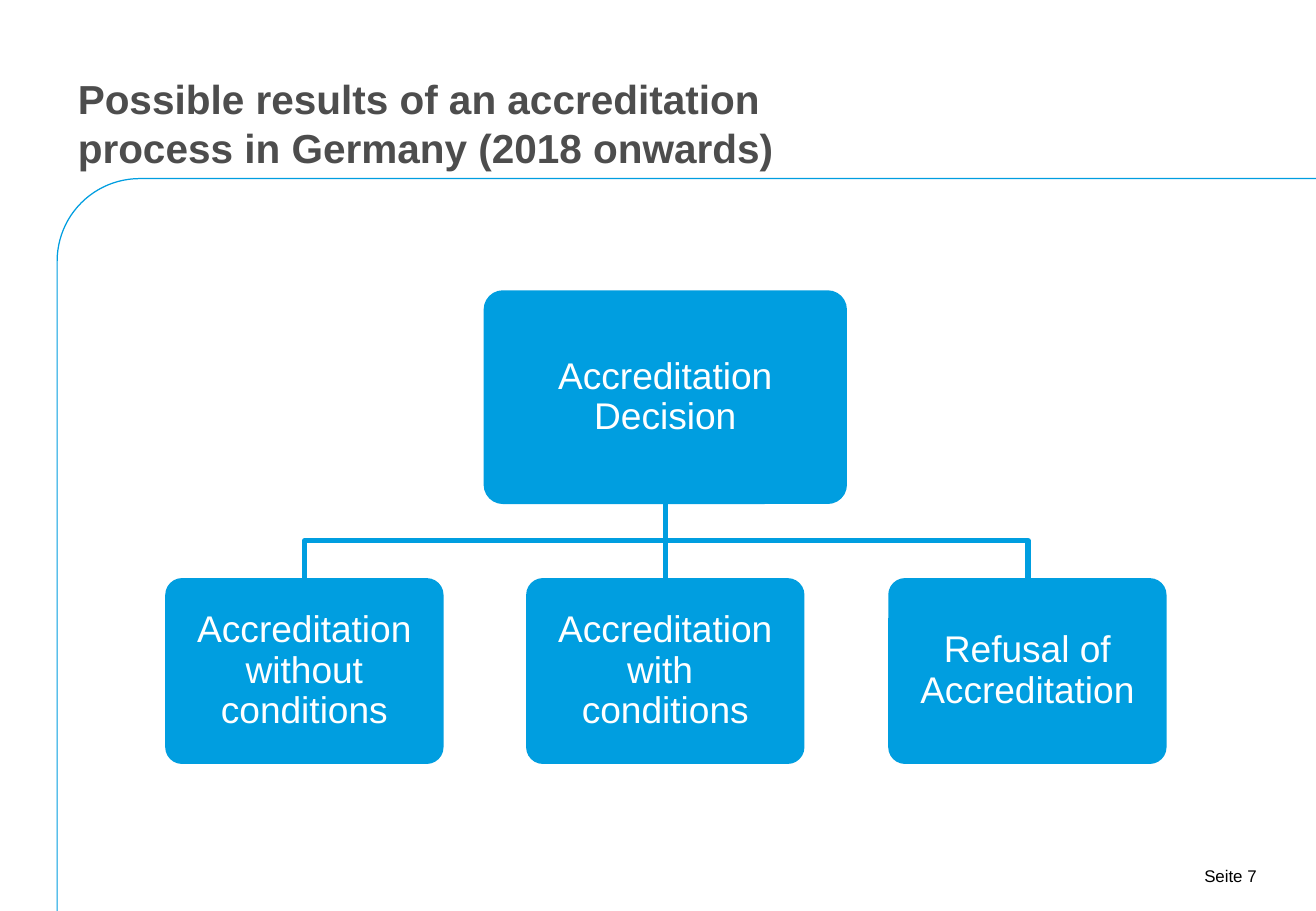
from lxml import etree
from pptx import Presentation
from pptx.dml.color import RGBColor
from pptx.enum.shapes import MSO_CONNECTOR, MSO_SHAPE
from pptx.enum.text import MSO_ANCHOR, MSO_AUTO_SIZE, PP_ALIGN
from pptx.oxml.ns import qn
from pptx.util import Pt

ROUND = MSO_SHAPE.ROUNDED_RECTANGLE
STRAIGHT = MSO_CONNECTOR.STRAIGHT
LEFT, MID, RIGHT = PP_ALIGN.LEFT, PP_ALIGN.CENTER, PP_ALIGN.RIGHT
TOP, CENTER, BASE = MSO_ANCHOR.TOP, MSO_ANCHOR.MIDDLE, MSO_ANCHOR.BOTTOM
NO_FIT = MSO_AUTO_SIZE.NONE
PX = 9144
FONT = "Arial"
COLORS = {"blue": "009EE0", "gray": "4D4D4D", "white": "FFFFFF", "black": "000000"}


def tint(name):
    """Return the named colour."""
    return RGBColor.from_string(COLORS[name])


def write(frame, text, size=22, color="white", bold=False, align=MID,
          anchor=CENTER, space=1.0, inset=(10, 5)):
    """Put formatted text into a text frame."""
    frame.word_wrap = True
    frame.auto_size = NO_FIT
    frame.vertical_anchor = anchor
    frame.margin_left = frame.margin_right = inset[0] * PX
    frame.margin_top = frame.margin_bottom = inset[1] * PX
    para = frame.paragraphs[0]
    para.text = text
    para.alignment = align
    para.line_spacing = space
    font = para.font
    font.name, font.size, font.bold = FONT, Pt(size), bold
    font.color.rgb = tint(color)


class Page:
    """Draws styled elements on one slide."""

    def __init__(self, deck):
        """Add a slide with a title."""
        self.slide = deck.slides.add_slide(deck.slide_layouts[5])
        self.shapes = self.slide.shapes

    def stroke(self, line, width):
        """Style a line in blue."""
        line.color.rgb = tint("blue")
        line.width = Pt(width)

    def title(self, text, x, y, w, h):
        """Move and fill the title."""
        head = self.shapes.title
        head.left, head.top, head.width, head.height = (n * PX for n in (x, y, w, h))
        write(head.text_frame, text, size=24, color="gray", bold=True,
              align=LEFT, anchor=BASE)

    def label(self, text, x, y, w, h, **style):
        """Add a text box."""
        box = self.shapes.add_textbox(x * PX, y * PX, w * PX, h * PX)
        write(box.text_frame, text, **style)

    def panel(self, x, y, w, h, curve):
        """Add a plain rounded shape."""
        shape = self.shapes.add_shape(ROUND, x * PX, y * PX, w * PX, h * PX)
        shape.adjustments[0] = curve
        shape.shadow.inherit = False
        return shape

    def frame(self, x, y, w, h):
        """Add the thin outline."""
        shape = self.panel(x, y, w, h, 0.097)
        shape.fill.background()
        self.stroke(shape.line, 0.75)

    def node(self, text, x, y, w, h):
        """Add a filled box with text."""
        shape = self.panel(x, y, w, h, 0.09)
        shape.fill.solid()
        shape.fill.fore_color.rgb = tint("blue")
        shape.line.fill.background()
        write(shape.text_frame, text, space=0.9, inset=(8, 12))

    def line(self, x1, y1, x2, y2):
        """Add a straight link."""
        link = self.shapes.add_connector(STRAIGHT, x1 * PX, y1 * PX, x2 * PX, y2 * PX)
        self.stroke(link.line, 3)
        etree.SubElement(link._element.spPr, qn("a:effectLst"))

    def bend(self, first, *rest):
        """Add a link through several points."""
        path = self.shapes.build_freeform(*first, scale=PX)
        path.add_line_segments(rest, close=False)
        shape = path.convert_to_shape()
        shape.fill.background()
        shape.shadow.inherit = False
        self.stroke(shape.line, 3)


def main():
    """Build and save the slide."""
    deck = Presentation()
    deck.slide_width, deck.slide_height = 1083 * PX, 750 * PX
    page = Page(deck)
    page.frame(47, 147, 1331, 701)
    page.label("Seite 7", 570, 708, 474, 27, size=10, color="black",
               align=RIGHT, anchor=TOP)
    page.title("Possible results of an accreditation process in Germany (2018 onwards)",
               54, 21, 701, 125)

    stem, foot, bar, row, wide = 548, 415, 445, 476, 229
    results = ("Accreditation without conditions",
               "Accreditation with \vconditions",
               "Refusal of Accreditation")
    for i, text in enumerate(results):
        left = 136 + i * 595 // 2
        drop = left + (wide + 1) // 2
        if drop == stem:
            page.line(stem, foot, stem, row)
        else:
            page.bend((stem, foot), (stem, bar), (drop, bar), (drop, row))
        page.node(text, left, row, wide, 153)
    page.node("Accreditation Decision", 398, 239, 299, 176)
    deck.save("out.pptx")


if __name__ == "__main__":
    main()
